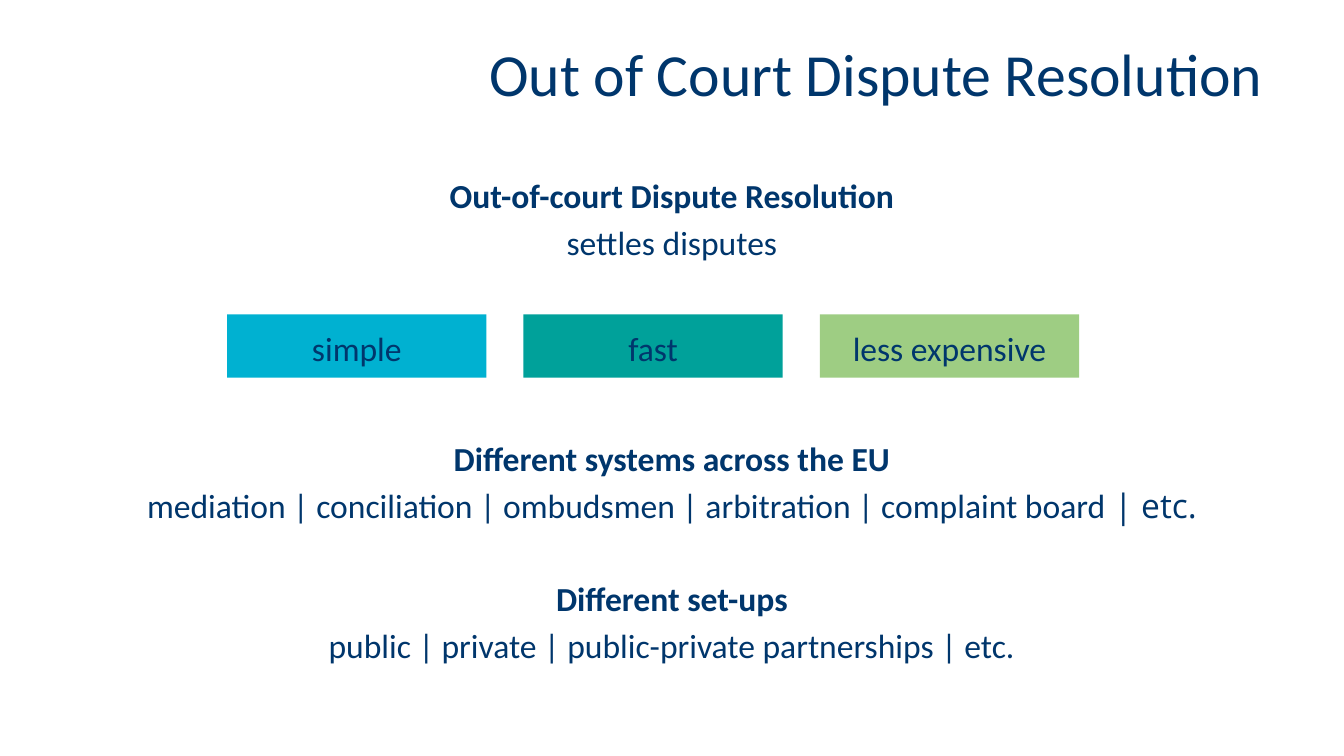
from pptx import Presentation
from pptx.dml.color import RGBColor
from pptx.enum.shapes import MSO_SHAPE
from pptx.enum.text import MSO_ANCHOR, MSO_AUTO_SIZE, PP_ALIGN
from pptx.util import Inches, Pt

NAVY = RGBColor(0x00, 0x36, 0x6C)
CYAN = RGBColor(0x00, 0xB1, 0xD1)
TEAL = RGBColor(0x00, 0xA1, 0x9A)
GREEN = RGBColor(0x9E, 0xCD, 0x83)
RECTANGLE = MSO_SHAPE.RECTANGLE
TOP = MSO_ANCHOR.TOP
CENTER, RIGHT = PP_ALIGN.CENTER, PP_ALIGN.RIGHT


def add_run(paragraph, text, **formats):
    run = paragraph.add_run()
    run.text = text
    run.font.color.rgb = NAVY
    for name, value in ({"name": "Calibri", "size": Pt(18), "bold": False} | formats).items():
        setattr(run.font, name, value)


def set_frame(frame, **formats):
    defaults = {"word_wrap": True, "auto_size": MSO_AUTO_SIZE.NONE, "vertical_anchor": TOP}
    for name, value in (defaults | formats).items():
        setattr(frame, name, value)


# Widescreen slide, 16:9
presentation = Presentation()
presentation.slide_width = Inches(10)
presentation.slide_height = Inches(10 * 9 / 16)
slide = presentation.slides.add_slide(presentation.slide_layouts[5])

# Title
title = slide.shapes.title
title.left, title.top, title.width, title.height = map(Inches, (0.2, 0.23, 9.3, 0.62))
set_frame(title.text_frame, margin_top=Inches(0.04))
paragraph = title.text_frame.paragraphs[0]
paragraph.alignment = RIGHT
add_run(paragraph, "Out of Court Dispute Resolution", size=Pt(32))

# Headings with their details; the first gap leaves room for the boxes
sections = [
    (0, "Out-of-court Dispute Resolution", [("settles disputes", "Calibri")]),
    (94, "Different systems across the EU", [
        ("mediation | conciliation | ombudsmen | arbitration | complaint board ", "Calibri"),
        ("| etc.", "Open Sans"),
    ]),
    (28.5, "Different set-ups", [
        ("public | private | public-private partnerships | etc.", "Calibri"),
    ]),
]
body = slide.shapes.add_textbox(*map(Inches, (0.28, 1.25, 9.44, 4.25)))
set_frame(body.text_frame)
for index, (gap, heading, details) in enumerate(sections):
    paragraph = body.text_frame.add_paragraph() if index else body.text_frame.paragraphs[0]
    paragraph.alignment = CENTER
    if index:
        paragraph.space_before = Pt(gap)
    add_run(paragraph, heading, bold=True)
    paragraph = body.text_frame.add_paragraph()
    paragraph.alignment = CENTER
    paragraph.space_before = Pt(3.6)
    for text, font_name in details:
        add_run(paragraph, text, name=font_name)

# Row of three benefit boxes
first_left, last_left = 1.69, 6.1
margins = {f"margin_{side}": Inches(0.1) for side in ("left", "top", "right", "bottom")}
benefits = [("simple", CYAN), ("fast", TEAL), ("less expensive", GREEN)]
column_pitch = (last_left - first_left) / (len(benefits) - 1)
for column, (text, color) in enumerate(benefits):
    left = first_left + column * column_pitch
    box = slide.shapes.add_shape(RECTANGLE, *map(Inches, (left, 2.34, 1.93, 0.47)))
    box.shadow.inherit = False
    box.fill.solid()
    box.fill.fore_color.rgb = color
    box.line.fill.background()
    set_frame(box.text_frame, **margins)
    paragraph = box.text_frame.paragraphs[0]
    paragraph.alignment = CENTER
    add_run(paragraph, text)

presentation.save("out.pptx")
